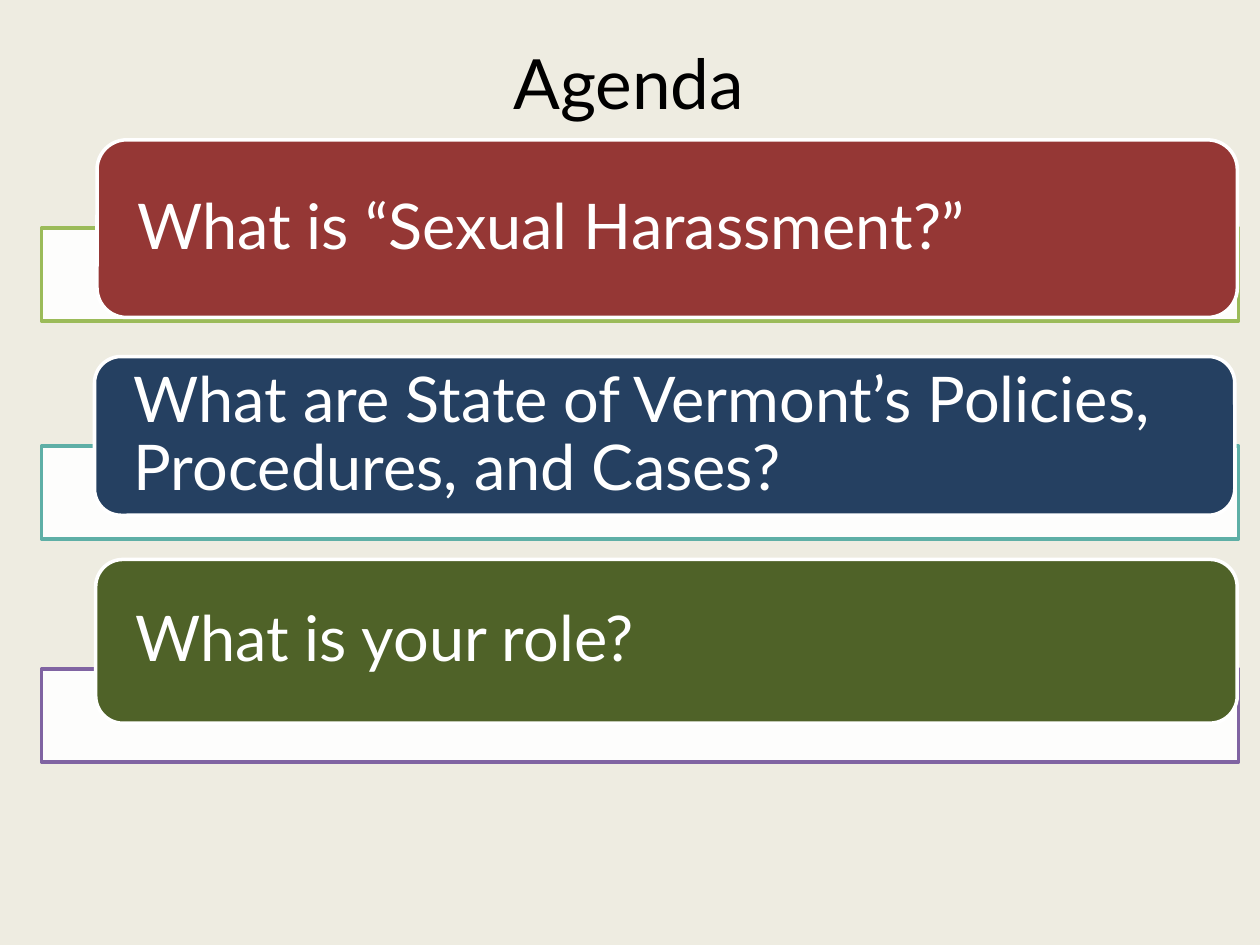
from lxml import etree
from pptx import Presentation
from pptx.dml.color import RGBColor
from pptx.enum.shapes import MSO_SHAPE
from pptx.enum.text import MSO_ANCHOR, PP_ALIGN
from pptx.oxml.ns import qn
from pptx.util import Pt

RECTANGLE = MSO_SHAPE.RECTANGLE
ROUNDED = MSO_SHAPE.ROUNDED_RECTANGLE
MIDDLE = MSO_ANCHOR.MIDDLE
LEFT, CENTER = PP_ALIGN.LEFT, PP_ALIGN.CENTER
TITLE_ONLY = 5

BAR_LEFT, BAR_WIDTH, BAR_HEIGHT = 23.76, 684, 53.28

# Bar top, bar line colour, card box (left, top, width, height), card colour, text
AGENDA = [
    (130.32, "9BBB59", (55.44, 79.92, 651.6, 101.52), "953735",
     "What is “Sexual Harassment?”"),
    (254.88, "5EAFA6", (54, 203.76, 651.6, 90.72), "254061",
     "What are State of Vermont’s Policies, Procedures, and Cases?"),
    (382.32, "8064A2", (54.72, 319.68, 652.32, 93.6), "4F6228",
     "What is your role?"),
]


def color(value):
    return RGBColor.from_string(value)


class AgendaSlide:
    font_name = "Lato"
    title_size = 39.6
    text_size = 36
    line_width = 2

    def __init__(self, presentation, background):
        self.slide = presentation.slides.add_slide(presentation.slide_layouts[TITLE_ONLY])
        fill = self.slide.background.fill
        fill.solid()
        fill.fore_color.rgb = color(background)

    def set_text(self, shape, text, size, text_color, alignment, side_margin):
        frame = shape.text_frame
        frame.word_wrap = True
        frame.vertical_anchor = MIDDLE
        frame.margin_left = frame.margin_right = Pt(side_margin)
        frame.margin_top = frame.margin_bottom = 0
        frame.text = text
        paragraph = frame.paragraphs[0]
        paragraph.alignment = alignment
        paragraph.font.name = self.font_name
        paragraph.font.size = Pt(size)
        paragraph.font.color.rgb = color(text_color)
        return paragraph

    def title(self, text, left, top, width, height):
        title = self.slide.shapes.title
        title.left, title.top = Pt(left), Pt(top)
        title.width, title.height = Pt(width), Pt(height)
        self.set_text(title, text, self.title_size, "000000", CENTER, 7.2)

    def box(self, kind, left, top, width, height, fill, line):
        shape = self.slide.shapes.add_shape(kind, Pt(left), Pt(top), Pt(width), Pt(height))
        shape.shadow.inherit = False
        shape.fill.solid()
        shape.fill.fore_color.rgb = color(fill)
        shape.line.color.rgb = color(line)
        shape.line.width = Pt(self.line_width)
        return shape

    def bar(self, top, line):
        shape = self.box(RECTANGLE, BAR_LEFT, top, BAR_WIDTH, BAR_HEIGHT, "FFFFFF", line)
        # 90% opaque fill
        fill_color = shape.element.spPr.find(qn("a:solidFill"))[0]
        etree.SubElement(fill_color, qn("a:alpha")).set("val", "90000")

    def card(self, bounds, fill, text):
        shape = self.box(ROUNDED, *bounds, fill, "FFFFFF")
        paragraph = self.set_text(shape, text, self.text_size, "FFFFFF", LEFT, 18)
        paragraph.line_spacing = 0.9


def main():
    presentation = Presentation()
    presentation.slide_width, presentation.slide_height = Pt(720), Pt(540)
    agenda = AgendaSlide(presentation, "EEECE1")

    # Title
    agenda.title(" Agenda ", 36, 21.6, 648, 50.4)

    # Agenda items: a pale bar behind a coloured card
    for bar_top, bar_line, bounds, fill, text in AGENDA:
        agenda.bar(bar_top, bar_line)
        agenda.card(bounds, fill, text)

    presentation.save("out.pptx")


if __name__ == "__main__":
    main()
